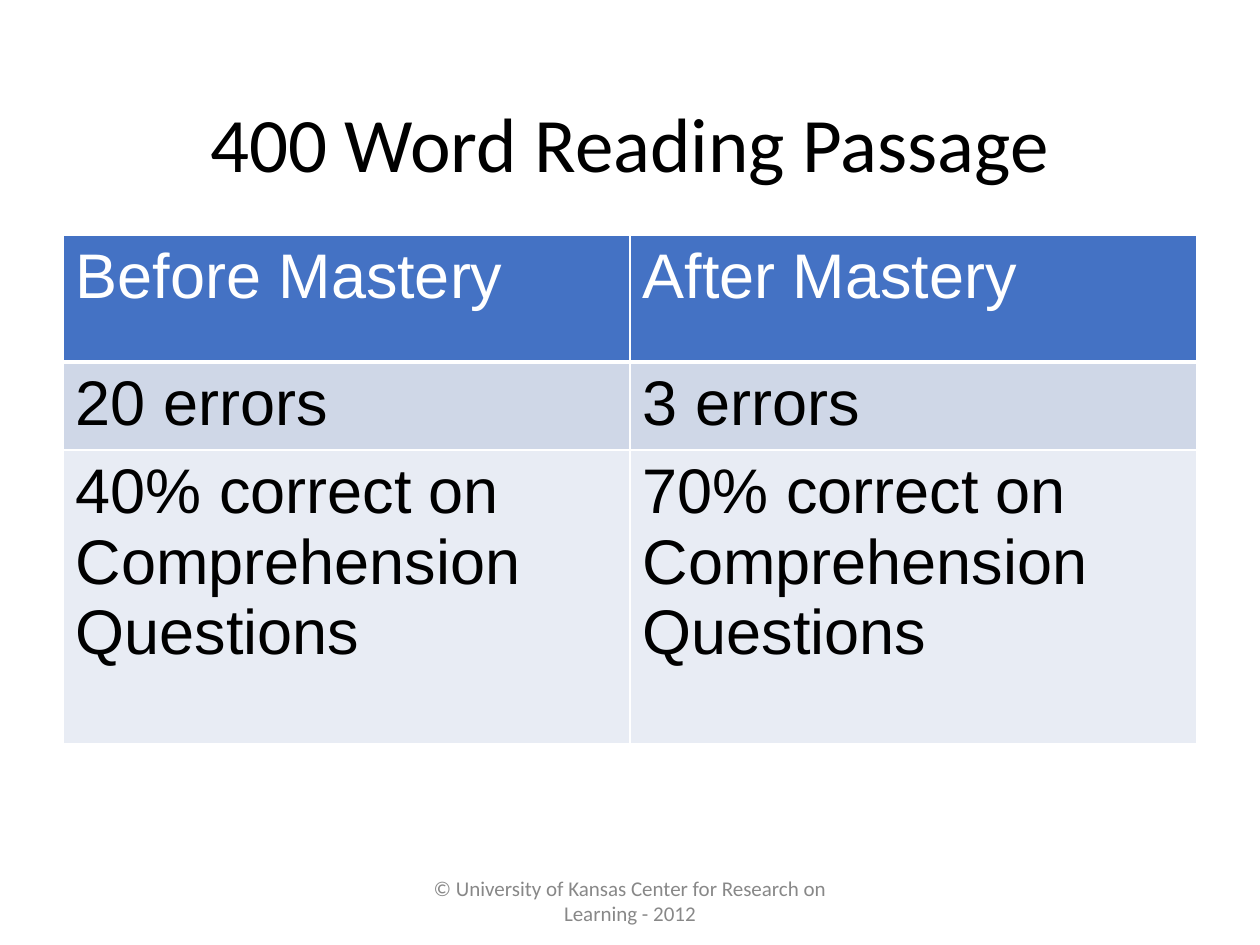
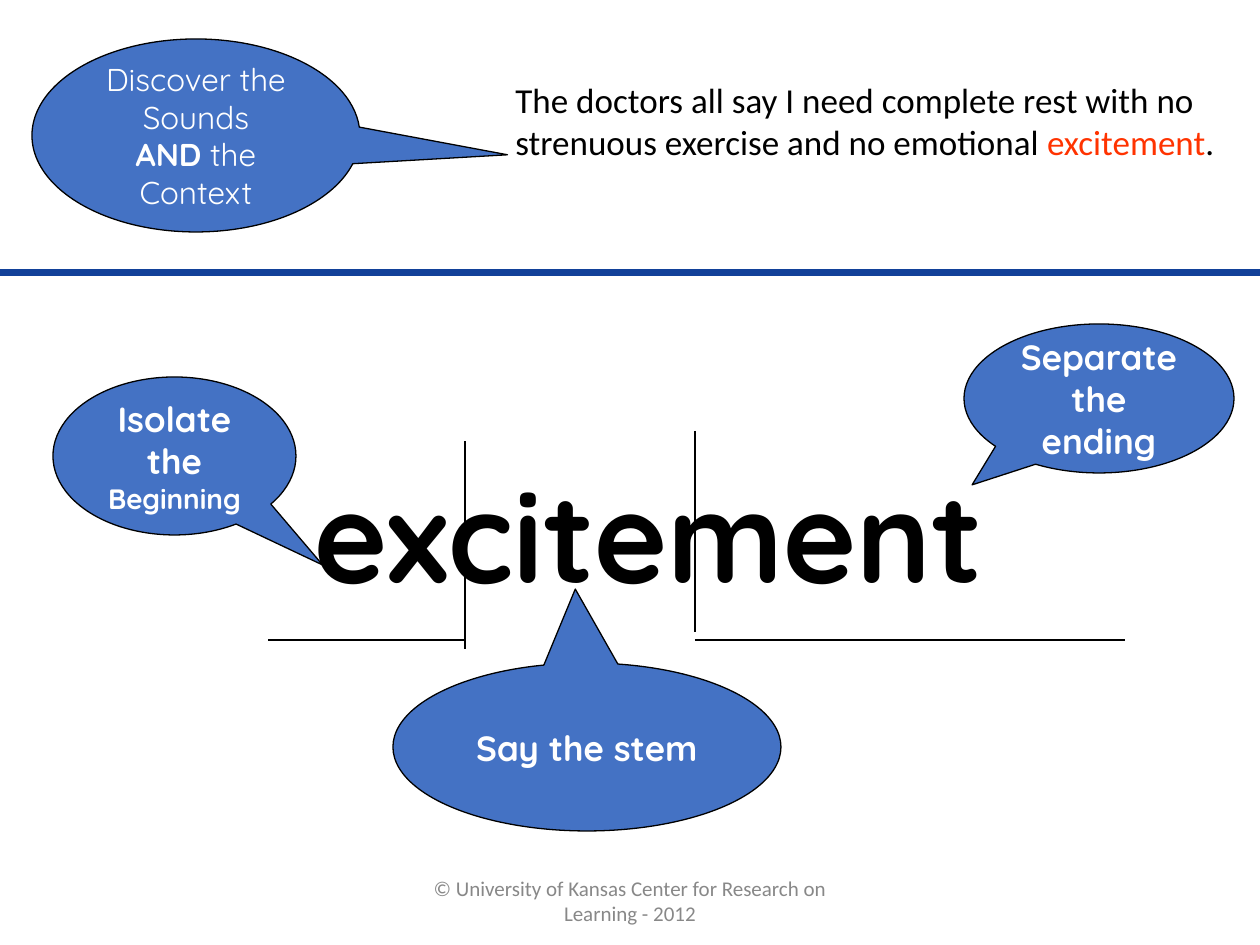
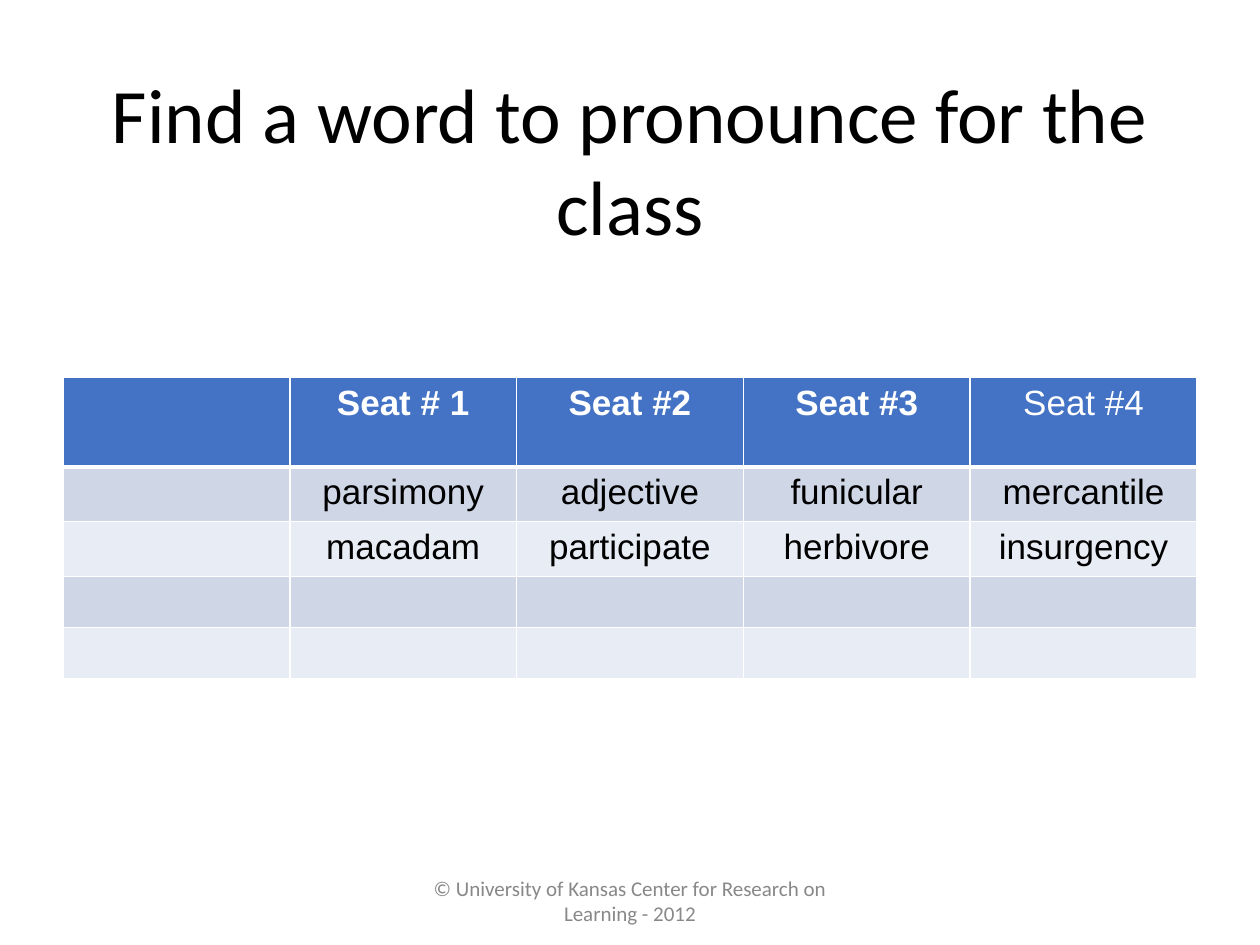
from lxml import etree
from pptx import Presentation
from pptx.dml.color import RGBColor
from pptx.enum.shapes import MSO_CONNECTOR, MSO_SHAPE
from pptx.enum.text import MSO_ANCHOR, PP_ALIGN
from pptx.oxml.ns import qn
from pptx.util import Pt

STRAIGHT = MSO_CONNECTOR.STRAIGHT
BUBBLE = MSO_SHAPE.OVAL_CALLOUT
MIDDLE, TOP = MSO_ANCHOR.MIDDLE, MSO_ANCHOR.TOP
LEFT, CENTER = PP_ALIGN.LEFT, PP_ALIGN.CENTER
HUES = {"blue": "4472C4", "navy": "124199", "white": "FFFFFF", "black": "000000",
        "gray": "888888", "red": "FF3300", "dark": "CFD7E7", "pale": "E8ECF4"}
WIDE, HIGH = 1260, 945
FOOT = "© University of Kansas Center for Research on Learning - 2012"


def px(*sizes):
    """Turn pixel lengths into a list of EMU."""
    return [round(size * 914400 / 126) for size in sizes]


def hue(name):
    """Return the named colour."""
    return RGBColor.from_string(HUES[name])


def style(font, size=None, face=None, tint=None, bold=None):
    """Set the font traits that are given."""
    if size:
        font.size = Pt(size)
    if face:
        font.name = face
    if tint:
        font.color.rgb = hue(tint)
    if bold is not None:
        font.bold = bold


def write(frame, paras, align=LEFT, **look):
    """Fill a frame; a paragraph is a list of (text, traits) runs."""
    for i, runs in enumerate(paras):
        para = frame.add_paragraph() if i else frame.paragraphs[0]
        para.alignment = align
        style(para.font, **look)
        for text, traits in runs:
            run = para.add_run()
            run.text = text
            style(run.font, **traits)


def label(slide, box, runs, anchor=MIDDLE, **look):
    """Add a wrapped text box."""
    frame = slide.shapes.add_textbox(*px(*box)).text_frame
    frame.word_wrap = True
    frame.vertical_anchor = anchor
    write(frame, [runs], **look)


def rule(shapes, start, end, tint="black", width=0.75):
    """Draw a straight line."""
    line = shapes.add_connector(STRAIGHT, *px(*start, *end))
    line.line.color.rgb = hue(tint)
    line.line.width = Pt(width)
    etree.SubElement(line._element.spPr, qn("a:effectLst"))


def bubble(slide, box, tip, paras, size=20, bold=True):
    """Add an oval callout whose tip is given relative to its centre."""
    shape = slide.shapes.add_shape(BUBBLE, *px(*box))
    shape.shadow.inherit = False
    shape.adjustments[0], shape.adjustments[1] = tip
    shape.fill.solid()
    shape.fill.fore_color.rgb = hue("blue")
    shape.line.color.rgb = hue("black")
    shape.line.width = Pt(0.75)
    frame = shape.text_frame
    frame.word_wrap = True
    frame.vertical_anchor = MIDDLE
    write(frame, paras, CENTER, size=size, face="Quicksand", tint="white", bold=bold)


def edge(cell, **widths):
    """Give a cell white borders, in points per side."""
    props = cell._tc.get_or_add_tcPr()
    for side, width in widths.items():
        line = etree.SubElement(props, qn(f"a:ln{side}"), w=str(Pt(width)))
        fill = etree.SubElement(line, qn("a:solidFill"))
        etree.SubElement(fill, qn("a:srgbClr"), val=HUES["white"])


def grid(slide, box, rows, highs, size, align=LEFT, strong=0):
    """Add a banded table whose first `strong` header cells are bold."""
    left, top, width = box
    count = len(rows[0])
    table = slide.shapes.add_table(
        len(rows), count, *px(left, top, width, sum(highs))).table
    for column in table.columns:
        column.width = px(width)[0] // count
    for r, (row, high) in enumerate(zip(rows, highs)):
        table.rows[r].height = px(high)[0]
        band = ("dark" if r % 2 else "pale") if r else "blue"
        for c, text in enumerate(row):
            cell = table.cell(r, c)
            edge(cell, L=1, R=1, T=3 if r == 1 else 1, B=1 if r else 3)
            cell.fill.solid()
            cell.fill.fore_color.rgb = hue(band)
            if text:
                write(cell.text_frame, [[(text, {})]], align, size=size, face="Arial",
                      tint="black" if r else "white", bold=not r and c < strong)


def page(deck):
    """Add a blank slide with the footer."""
    slide = deck.slides.add_slide(deck.slide_layouts[6])
    label(slide, (417, 876, 426, 50), [(FOOT, {})], align=CENTER,
          size=12, face="Calibri", tint="gray")
    return slide


def chart(deck, title, head, box, rows, highs, **look):
    """Build a slide with a title above a table."""
    slide = page(deck)
    label(slide, head, [(title, {})], align=CENTER, size=44, face="Calibri", tint="black")
    grid(slide, box, rows, highs, **look)


def quote(slide, box):
    """Place the sentence, its callout and the line below them."""
    x, y, w, h = box
    label(slide, (x + 503, y, 726, 242),
          [("The doctors all say I need complete rest with no strenuous exercise "
            "and no emotional ", {}), ("excitement", {"tint": "red"}), (".", {})],
          size=20, face="Calibri", tint="black")
    rule(slide.shapes, (x, y + h), (x + w, y + h), "navy", 4)
    bubble(slide, (x + 32, y + 39, 328, 193), (0.95, 0.1),
           [[("Discover the Sounds", {})], [("AND", {"bold": True}), (" the Context", {})]],
           size=18, bold=None)


def bracket(slide, x, top, end, base, side):
    """Group an upright line with the line under a word part."""
    shapes = slide.shapes.add_group_shape().shapes
    rule(shapes, (x, top), (x, end))
    rule(shapes, (x, base), (side, base))


def split(slide, box):
    """Place the split word with its three callouts."""
    x, y = box[:2]
    bubble(slide, (x + 53, y + 104, 243, 158), (0.61, 0.69),
           [[("Isolate", {})], [("the", {})], [("Beginning", {"size": 16})]])
    bubble(slide, (x + 964, y + 51, 270, 149), (-0.47, 0.58),
           [[(word, {})] for word in ("Separate", "the", "ending")])
    bracket(slide, x + 465, y + 168, y + 376, y + 367, x + 268)
    bracket(slide, x + 695, y + 158, y + 359, y + 367, x + 1125)
    bubble(slide, (x + 393, y + 390, 388, 168), (-0.03, -0.94), [[("Say the stem", {})]])
    label(slide, (x + 302, y + 178, 755, 164), [("excitement", {})], TOP,
          size=72, face="Quicksand", tint="black", bold=True)


def main():
    """Build and save the deck."""
    deck = Presentation()
    deck.slide_width, deck.slide_height = px(WIDE, HIGH)
    score = "{}% correct on Comprehension Questions"
    chart(deck, "400 Word Reading Passage", (87, 50, 1086, 183), (63, 235, 1134),
          [("Before Mastery", "After Mastery"), ("20 errors", "3 errors"),
           (score.format(40), score.format(70))], (127, 84, 294), size=36)
    slide = page(deck)
    quote(slide, (0, 0, WIDE, 273))
    split(slide, (0, 273, WIDE, 603))
    chart(deck, "Find a word to pronounce for the class", (63, 38, 1134, 241),
          (63, 377, 1134),
          [("", "Seat # 1", "Seat #2", "Seat #3", "Seat #4"),
           ("", "parsimony", "adjective", "funicular", "mercantile"),
           ("", "macadam", "participate", "herbivore", "insurgency"),
           ("",) * 5, ("",) * 5],
          (90,) + (51,) * 4, size=20, align=CENTER, strong=4)
    deck.save("out.pptx")


if __name__ == "__main__":
    main()
